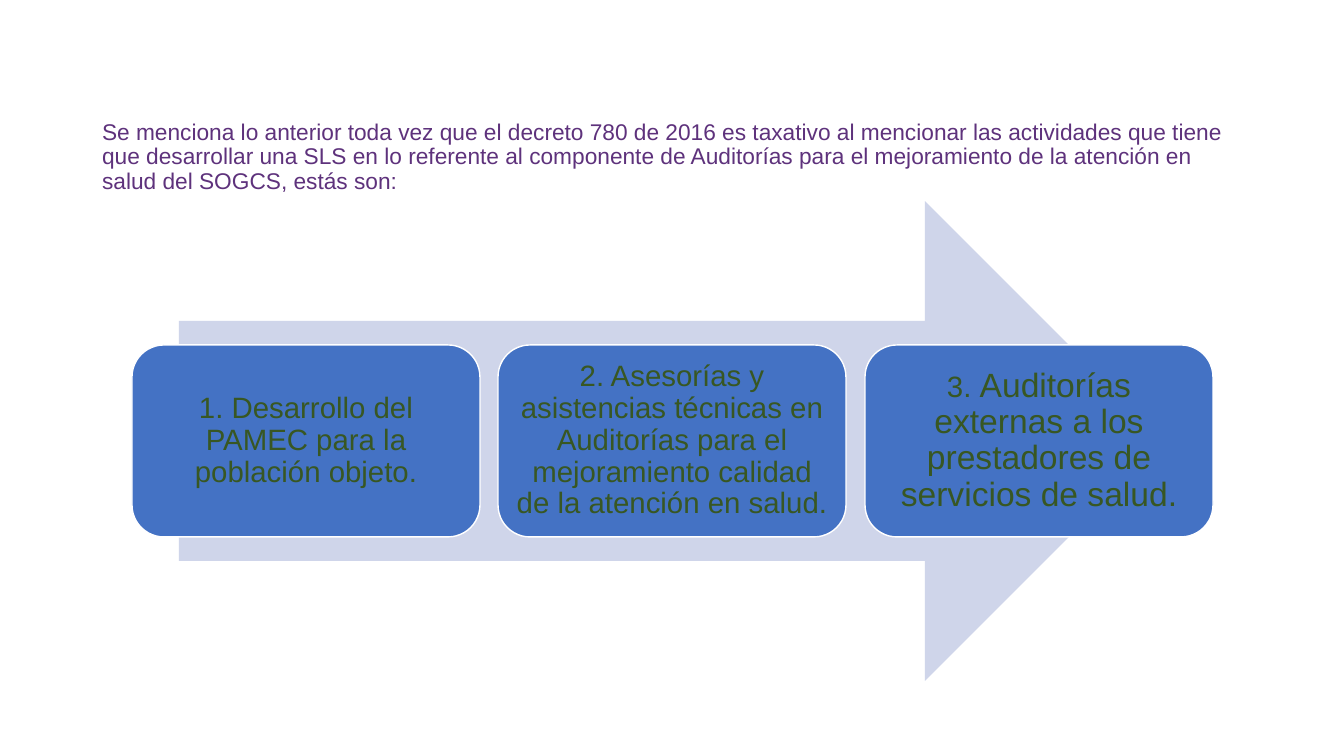
"""Builds a slide with an arrow behind three steps on health audits."""
import pptx
import pptx.util
import pptx.dml.color
import pptx.enum.shapes
import pptx.enum.text

RGB = pptx.dml.color.RGBColor
SHAPE = pptx.enum.shapes.MSO_SHAPE
ALIGN = pptx.enum.text.PP_ALIGN
ANCHOR = pptx.enum.text.MSO_ANCHOR

PURPLE = RGB(0x5E, 0x32, 0x7C)
GREEN = RGB(0x38, 0x57, 0x23)
BLUE = RGB(0x44, 0x72, 0xC4)
PALE = RGB(0xCF, 0xD5, 0xEA)
WHITE = RGB(0xFF, 0xFF, 0xFF)

INTRO = (
    "Se menciona lo anterior toda vez que el decreto 780 de 2016 es taxativo "
    "al mencionar las actividades que tiene que desarrollar una SLS en lo "
    "referente al componente de Auditorías para el mejoramiento de la "
    "atención en salud del SOGCS, estás son:"
)
STEPS = [
    [("1. Desarrollo del PAMEC para la población objeto.", 21)],
    [("2. Asesorías y asistencias técnicas en Auditorías para el "
      "mejoramiento calidad de la atención en salud.", 21)],
    [("3. ", 21),
     ("Auditorías externas a los prestadores de servicios de salud.", 24)],
]


def px(count):
    return pptx.util.Emu(round(count * 914400 / 100.8))


class Page:
    def __init__(self, deck):
        self.font = "Arial"
        self.slide = deck.slides.add_slide(deck.slide_layouts[5])

    def text(self, frame, runs, color, align, anchor):
        frame.word_wrap = True
        frame.auto_size = pptx.enum.text.MSO_AUTO_SIZE.NONE
        frame.vertical_anchor = anchor
        para = frame.paragraphs[0]
        para.alignment = align
        para.line_spacing = 0.9
        para.space_before = pptx.util.Pt(0)
        for words, size in runs:
            run = para.add_run()
            run.text = words
            run.font.name = self.font
            run.font.size = pptx.util.Pt(size)
            run.font.color.rgb = color

    def title(self, words, left, top, width, height):
        title = self.slide.shapes.title
        title.left, title.top = px(left), px(top)
        title.width, title.height = px(width), px(height)
        frame = title.text_frame
        frame.margin_bottom = px(7)
        self.text(frame, [(words, 16.2)], PURPLE, ALIGN.LEFT, ANCHOR.BOTTOM)

    def shape(self, kind, fill, left, top, width, height):
        shape = self.slide.shapes.add_shape(
            kind, px(left), px(top), px(width), px(height))
        shape.shadow.inherit = False
        shape.fill.solid()
        shape.fill.fore_color.rgb = fill
        shape.line.fill.background()
        return shape

    def step(self, runs, left, top, width, height):
        box = self.shape(SHAPE.ROUNDED_RECTANGLE, BLUE, left, top, width, height)
        box.line.color.rgb = WHITE
        box.line.width = pptx.util.Pt(1)
        frame = box.text_frame
        frame.margin_left = frame.margin_right = px(9)
        frame.margin_top = frame.margin_bottom = px(9)
        self.text(frame, runs, GREEN, ALIGN.CENTER, ANCHOR.MIDDLE)


def main():
    deck = pptx.Presentation()
    deck.slide_width, deck.slide_height = px(1344), px(756)
    page = Page(deck)
    page.title(INTRO, 92, 40, 1160, 161)
    page.shape(SHAPE.RIGHT_ARROW, PALE, 179, 201, 986, 480)
    for index, runs in enumerate(STEPS):
        page.step(runs, 132 + index * 733 // 2, 345, 348, 192)
    deck.save("out.pptx")


if __name__ == "__main__":
    main()
